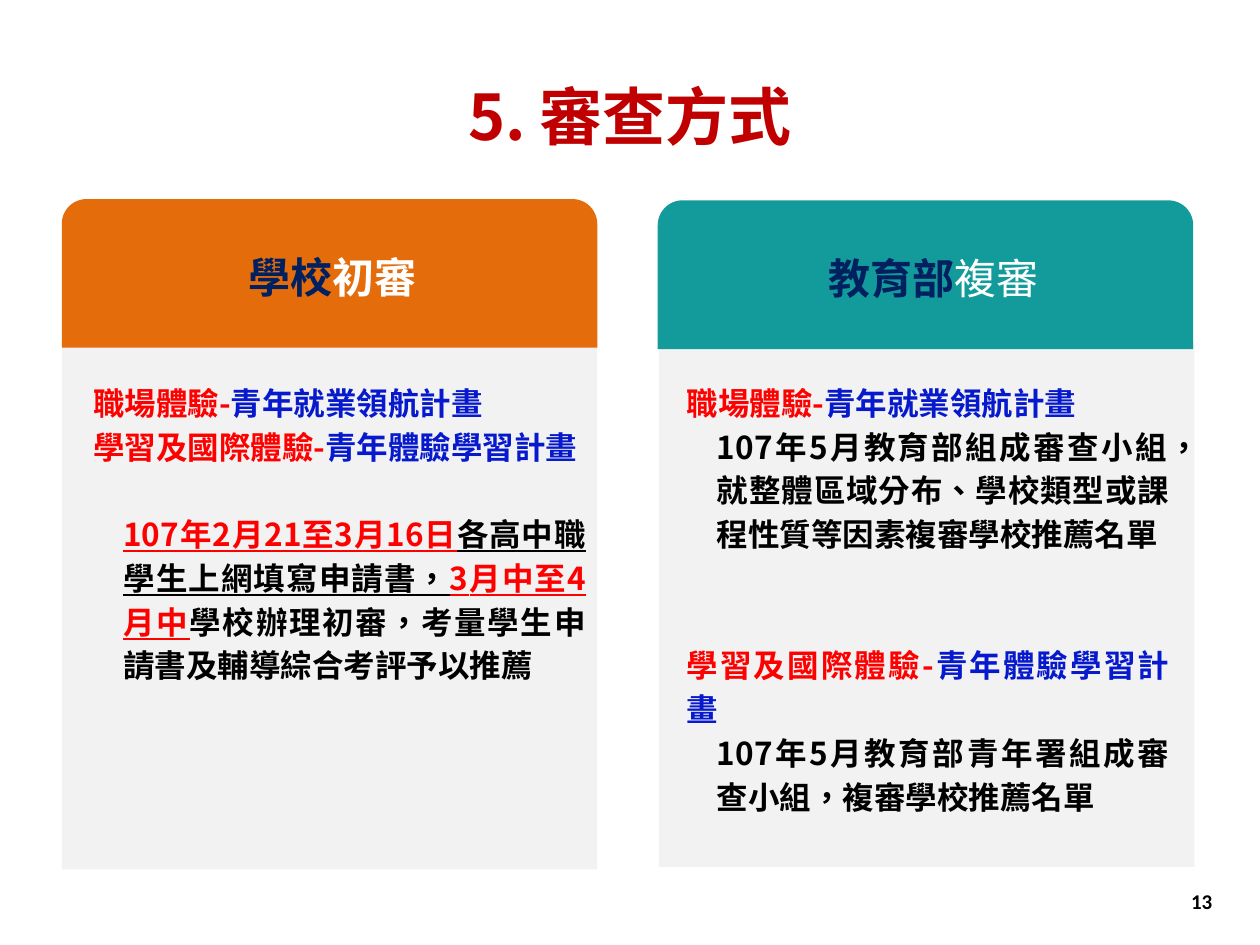
from dataclasses import dataclass

from pptx import Presentation
from pptx.dml.color import RGBColor as Rgb
from pptx.enum.lang import MSO_LANGUAGE_ID as Lang
from pptx.enum.shapes import MSO_SHAPE as Shape
from pptx.enum.text import MSO_ANCHOR as Anchor, PP_ALIGN as Align
from pptx.oxml.ns import qn
from pptx.util import Inches, Pt


@dataclass(frozen=True)
class Theme:
    cjk: str = "Noto Sans CJK SC"
    latin: str = "Calibri"
    title: str = "C00000"
    navy: str = "002060"
    white: str = "FFFFFF"
    black: str = "000000"
    red: str = "FF0000"
    blue: str = "0619CC"
    panel: str = "F2F2F2"
    orange: str = "E46C0A"
    teal: str = "139B9B"
    title_pt: int = 36
    head_pt: int = 24
    body_pt: int = 18
    page_pt: int = 12
    line_pt: int = 25


@dataclass(frozen=True)
class Span:
    text: str
    color: str
    bold: bool = True
    under: bool = False


@dataclass(frozen=True)
class Para:
    spans: tuple[Span, ...]
    indent: float = 0
    gap: int = 0  # empty lines above


@dataclass(frozen=True)
class Box:
    left: float
    top: float
    width: float
    height: float

    def emu(self) -> tuple:
        return tuple(map(Inches, (self.left, self.top, self.width, self.height)))


@dataclass(frozen=True)
class Card:
    panel: Box
    band: Box
    label: Box
    body: Box
    pads: tuple[float, float]
    color: str
    head: Para
    paras: tuple[Para, ...]


T = Theme()


def add_spans(para, spans: tuple[Span, ...], size: int, face: str = T.cjk) -> None:
    for span in spans:
        run = para.add_run()
        run.text = span.text
        font = run.font
        font.name, font.size, font.bold = face, Pt(size), span.bold
        font.color.rgb = Rgb.from_string(span.color)
        font.language_id = Lang.TRADITIONAL_CHINESE
        if span.under:
            font.underline = True
        # East Asian glyphs need their own typeface entry
        asian = font._element.makeelement(qn("a:ea"), {"typeface": face})
        font._element.find(qn("a:latin")).addnext(asian)


def add_shape(slide, kind: Shape, box: Box, color: str) -> None:
    shape = slide.shapes.add_shape(kind, *box.emu())
    shape.shadow.inherit = False
    shape.fill.solid()
    shape.fill.fore_color.rgb = Rgb.from_string(color)
    shape.line.fill.background()


def add_text(slide, box: Box, anchor: Anchor = Anchor.MIDDLE):
    frame = slide.shapes.add_textbox(*box.emu()).text_frame
    frame.word_wrap = True
    frame.vertical_anchor = anchor
    return frame


def add_card(slide, card: Card) -> None:
    add_shape(slide, Shape.RECTANGLE, card.panel, T.panel)
    add_shape(slide, Shape.ROUND_2_SAME_RECTANGLE, card.band, card.color)

    # Body text
    frame = add_text(slide, card.body, Anchor.TOP)
    frame.margin_left, frame.margin_right = map(Inches, card.pads)
    for i, item in enumerate(card.paras):
        para = frame.add_paragraph() if i else frame.paragraphs[0]
        para.alignment = Align.JUSTIFY
        para.line_spacing = Pt(T.line_pt)
        if item.gap:
            para.space_before = Pt(item.gap * T.line_pt)
        if item.indent:
            props = para._p.get_or_add_pPr()
            props.set("marL", str(Inches(item.indent)))
            props.set("indent", "0")
        add_spans(para, item.spans, T.body_pt)

    # Band heading
    para = add_text(slide, card.label).paragraphs[0]
    para.alignment = Align.CENTER
    para.line_spacing = 1.1
    add_spans(para, card.head.spans, T.head_pt)


def plan(kind: str, name: str, gap: int = 0) -> Para:
    return Para((Span(kind, T.red), Span(name, T.blue)), gap=gap)


def note(*spans: Span, gap: int = 0) -> Para:
    return Para(spans, 0.24, gap)


WORK = ("職場體驗-", "青年就業領航計畫")
STUDY = ("學習及國際體驗-", "青年體驗學習計畫")

CARDS = (
    Card(
        Box(0.49, 2.74, 4.25, 4.16), Box(0.49, 1.58, 4.25, 1.18),
        Box(0.87, 1.9, 3.54, 0.55), Box(0.56, 2.95, 4.1, 3.73),
        (0.18, 0.01), T.orange,
        Para((Span("學校", T.navy), Span("初審", T.white))),
        (
            plan(*WORK),
            plan(*STUDY),
            note(
                Span("107年2月21至3月16日", T.red, under=True),
                Span("各高中職學生上網填寫申請書，", T.black, under=True),
                Span("3月中至4月中", T.red, under=True),
                Span("學校辦理初審，考量學生申請書及輔導綜合考評予以推薦", T.black),
                gap=1,
            ),
        ),
    ),
    Card(
        Box(5.23, 2.72, 4.25, 4.16), Box(5.22, 1.59, 4.25, 1.18),
        Box(5.64, 1.91, 3.54, 0.55), Box(5.32, 2.95, 4.11, 3.73),
        (0.13, 0.15), T.teal,
        Para((Span("教育部", T.navy), Span("複審", T.white, bold=False))),
        (
            plan(*WORK),
            note(Span("107年5月教育部組成審查小組，就整體區域分布、"
                      "學校類型或課程性質等因素複審學校推薦名單", T.black)),
            plan(*STUDY, gap=2),
            note(Span("107年5月教育部青年署組成審查小組，複審學校推薦名單", T.black)),
        ),
    ),
)


def main() -> None:
    deck = Presentation()
    deck.slide_width, deck.slide_height = Inches(10), Inches(7.5)
    slide = deck.slides.add_slide(deck.slide_layouts[5])

    # Title
    title = slide.shapes.title
    title.left, title.top, title.width, title.height = Box(0, 0.62, 10, 0.59).emu()
    title.text_frame.vertical_anchor = Anchor.MIDDLE
    para = title.text_frame.paragraphs[0]
    para.alignment = Align.CENTER
    add_spans(para, (Span("5. 審查方式", T.title),), T.title_pt)

    # Review stages
    for card in CARDS:
        add_card(slide, card)

    # Page number
    para = add_text(slide, Box(7.39, 6.95, 2.33, 0.4)).paragraphs[0]
    para.alignment = Align.RIGHT
    add_spans(para, (Span("13", T.black),), T.page_pt, T.latin)

    deck.save("out.pptx")


if __name__ == "__main__":
    main()
